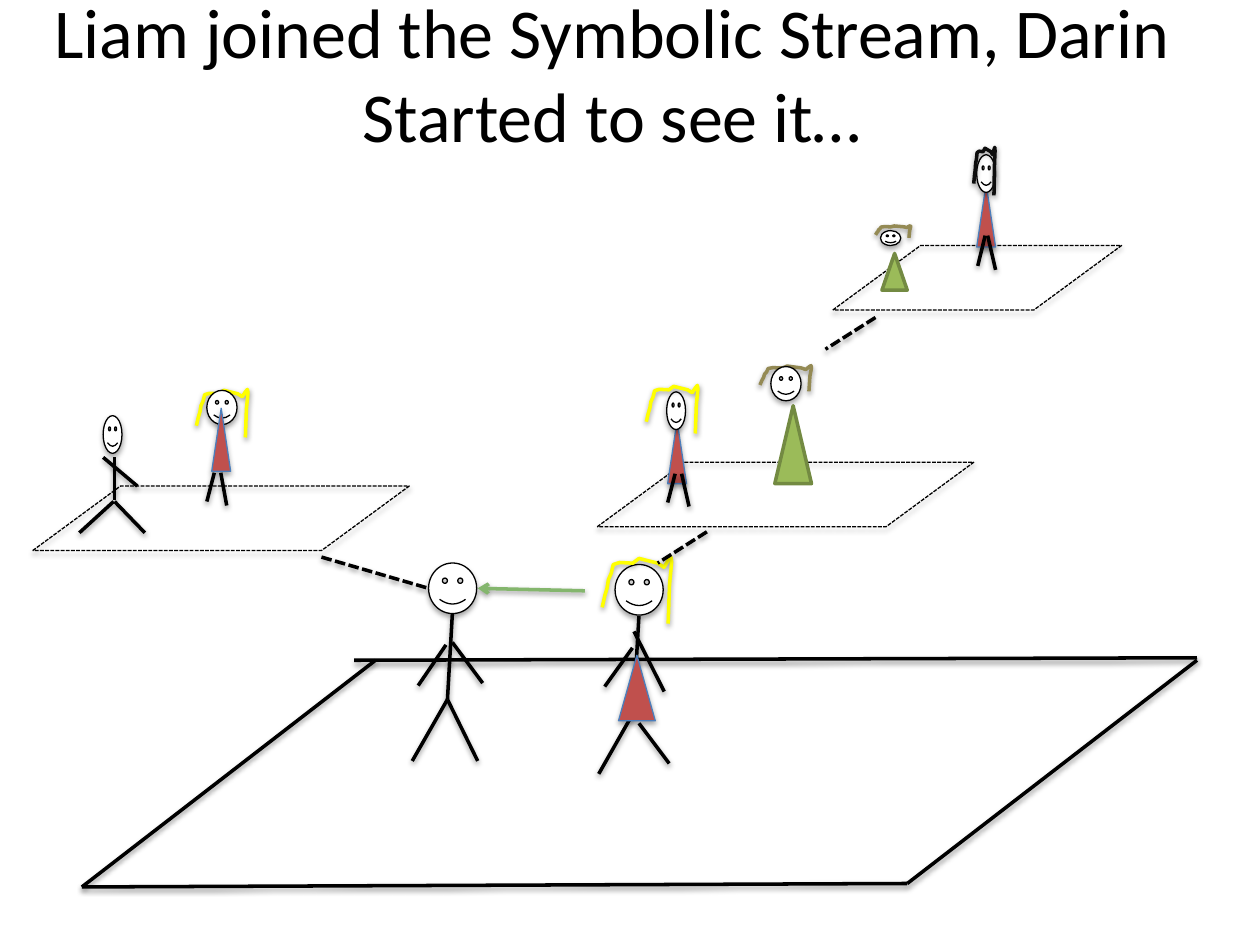
from dataclasses import dataclass
from typing import Optional, Union

from lxml import etree
from pptx import Presentation
from pptx import util as u
from pptx.dml.color import RGBColor
from pptx.enum import dml, shapes, text
from pptx.oxml.ns import qn

BLACK = RGBColor(0x00, 0x00, 0x00)
WHITE = RGBColor(0xFF, 0xFF, 0xFF)
YELLOW = RGBColor(0xFF, 0xFF, 0x00)
BROWN = RGBColor(0x94, 0x8A, 0x54)
NEAR_BLACK = RGBColor(0x0D, 0x0D, 0x0D)
RED = RGBColor(0xC0, 0x50, 0x4D)
BLUE = RGBColor(0x4B, 0x7E, 0xBC)
GREEN = RGBColor(0x9B, 0xBB, 0x59)
DARK_GREEN = RGBColor(0x73, 0x8A, 0x42)
ARROW_GREEN = RGBColor(0x84, 0xB6, 0x6D)

THIN, THICK = 0.75, 2
HAIR_CURVE = [
    (0, 0.74), (0.04, 0.56), (0.07, 0.46), (0.09, 0.33), (0.13, 0.24),
    (0.16, 0.11), (0.25, 0.08), (0.44, 0.09), (0.53, 0.02), (0.8, 0.09),
    (0.89, 0.15), (0.95, 0.05), (0.99, 0), (1, 0.07), (0.99, 0.19),
    (0.97, 0.4), (0.95, 0.98),
]


@dataclass
class Stroke:
    x1: float
    y1: float
    x2: float
    y2: float
    color: RGBColor = BLACK
    dashed: bool = False
    arrow: bool = False


@dataclass
class Solid:
    x: float
    y: float
    w: float
    h: float
    kind: shapes.MSO_SHAPE
    fill: Optional[RGBColor]
    line: RGBColor = BLACK
    width: float = THIN
    shadow: bool = True


@dataclass
class Hair:
    x: float
    y: float
    w: float
    h: float
    color: RGBColor = YELLOW


Item = Union[Stroke, Solid, Hair]


def head(x: float, y: float, w: float, h: float) -> Solid:
    return Solid(x, y, w, h, shapes.MSO_SHAPE.SMILEY_FACE, WHITE)


def red_dress(x: float, y: float, w: float = 0.38, h: float = 1.27) -> Solid:
    return Solid(x, y, w, h, shapes.MSO_SHAPE.ISOSCELES_TRIANGLE, RED, BLUE)


def green_dress(x: float, y: float, w: float, h: float) -> Solid:
    return Solid(x, y, w, h, shapes.MSO_SHAPE.ISOSCELES_TRIANGLE, GREEN,
                 DARK_GREEN, THICK, shadow=False)


def plane(x: float, y: float, w: float) -> Solid:
    return Solid(x, y, w, 1.3, shapes.MSO_SHAPE.PARALLELOGRAM, None)


FLOOR = [
    Stroke(1.65, 17.88, 18.29, 17.81), Stroke(7.14, 13.31, 24.13, 13.26),
    Stroke(1.65, 17.88, 7.57, 13.31), Stroke(18.29, 17.81, 24.13, 13.31),
]
MAN = [
    head(8.64, 11.35, 0.97, 1.02), Stroke(9.12, 12.37, 9.02, 14.1),
    Stroke(9.02, 14.1, 8.31, 15.34), Stroke(9.02, 14.1, 9.63, 15.34),
    Stroke(9.12, 12.95, 9.73, 13.77), Stroke(8.99, 13, 8.43, 13.82),
]
WOMAN = [
    head(12.4, 11.38, 0.97, 1.02), Stroke(12.88, 12.42, 12.78, 14.15),
    Stroke(12.78, 14.35, 12.07, 15.6), Stroke(12.78, 12.73, 13.39, 13.94),
    Stroke(12.88, 14.58, 13.49, 15.39), Stroke(12.75, 13.06, 12.19, 13.84),
    Hair(12.14, 11.23, 1.4, 1.37), red_dress(12.47, 13.21, 0.74, 1.32),
    Stroke(11.79, 11.91, 9.63, 11.86, ARROW_GREEN, arrow=True),
]
LEFT_THOUGHT = [
    plane(0.66, 9.8, 7.59), Stroke(6.48, 11.23, 8.64, 11.86, dashed=True),
    Hair(3.96, 7.85, 1.04, 0.99), head(4.17, 7.87, 0.61, 0.69),
    red_dress(4.27, 8.23),
    Stroke(4.32, 9.53, 4.17, 10.11), Stroke(4.45, 9.53, 4.57, 10.19),
    head(2.08, 8.38, 0.38, 0.76), Stroke(2.31, 9.22, 2.31, 10.08),
    Stroke(2.29, 10.11, 1.6, 10.74), Stroke(2.31, 10.11, 2.92, 10.74),
    Stroke(2.08, 9.22, 2.77, 9.8),
]
MIDDLE_THOUGHT = [
    plane(12.04, 9.32, 7.59), Hair(15.32, 7.37, 1.04, 0.53, BROWN),
    head(15.54, 7.39, 0.61, 0.69), red_dress(13.46, 8.48),
    Stroke(13.61, 9.55, 13.46, 10.13), Stroke(13.74, 9.55, 13.89, 10.21),
    head(13.44, 7.9, 0.38, 0.76),
    Stroke(14.25, 10.72, 13.26, 11.35, dashed=True),
    Hair(13.03, 7.77, 1.04, 0.99), green_dress(15.62, 8.18, 0.74, 1.57),
]
FAR_THOUGHT = [
    plane(16.79, 4.95, 5.82), Stroke(17.65, 6.4, 16.64, 7.04, dashed=True),
    Hair(17.65, 4.55, 0.71, 0.25, BROWN), head(17.75, 4.65, 0.41, 0.3),
    red_dress(19.69, 3.71), Stroke(19.86, 4.75, 19.71, 5.36),
    head(19.69, 3.12, 0.38, 0.76), Hair(19.63, 2.97, 0.43, 0.99, NEAR_BLACK),
    green_dress(17.78, 5.11, 0.51, 0.74), Stroke(19.91, 4.75, 20.07, 5.44),
]


def set_line(sp, color: RGBColor, width: float, dashed: bool = False) -> None:
    sp.line.color.rgb = color
    sp.line.width = u.Pt(width)
    if dashed:
        sp.line.dash_style = dml.MSO_LINE.SQUARE_DOT


def set_shadow(sp, opacity: int, distance: float, visible: bool = True) -> None:
    effects = etree.SubElement(sp._element.spPr, qn("a:effectLst"))
    if visible:
        shadow = etree.SubElement(
            effects, qn("a:outerShdw"), blurRad=str(u.Pt(3.1)),
            dist=str(u.Pt(distance)), dir="5400000", rotWithShape="0")
        color = etree.SubElement(shadow, qn("a:srgbClr"), val=str(BLACK))
        etree.SubElement(color, qn("a:alpha"), val=str(opacity * 1000))


def draw_stroke(s, item: Stroke) -> None:
    ends = [u.Cm(v) for v in (item.x1, item.y1, item.x2, item.y2)]
    sp = s.shapes.add_connector(shapes.MSO_CONNECTOR.STRAIGHT, *ends)
    set_line(sp, item.color, THICK, item.dashed)
    if item.arrow:
        etree.SubElement(sp.line._get_or_add_ln(), qn("a:tailEnd"), type="arrow")
    set_shadow(sp, 38, 1.6)


def draw_solid(s, item: Solid) -> None:
    box = [u.Cm(v) for v in (item.x, item.y, item.w, item.h)]
    sp = s.shapes.add_shape(item.kind, *box)
    if item.fill is None:
        sp.fill.background()
        sp.adjustments[0] = 1.36
    else:
        sp.fill.solid()
        sp.fill.fore_color.rgb = item.fill
    set_line(sp, item.line, item.width, dashed=item.fill is None)
    set_shadow(sp, 35, 1.8, item.shadow)


def draw_hair(s, item: Hair) -> None:
    points = [(u.Cm(item.x + item.w * px), u.Cm(item.y + item.h * py))
              for px, py in HAIR_CURVE]
    builder = s.shapes.build_freeform(*points[0])
    builder.add_line_segments(points[1:], close=False)
    sp = builder.convert_to_shape()
    sp.fill.background()
    set_line(sp, item.color, THICK)
    set_shadow(sp, 38, 1.6)


def draw_title(s, words: str) -> None:
    sp = s.shapes.add_textbox(u.Cm(-0.08), u.Cm(0.1), u.Cm(24.84), u.Cm(2.72))
    tf = sp.text_frame
    tf.word_wrap = True
    tf.vertical_anchor = text.MSO_ANCHOR.MIDDLE
    p = tf.paragraphs[0]
    p.text = words
    p.alignment = text.PP_ALIGN.CENTER
    p.font.name = "Calibri"
    p.font.size = u.Pt(40)
    p.font.color.rgb = BLACK


def main() -> None:
    prs = Presentation()
    prs.slide_width, prs.slide_height = u.Cm(25.4), u.Cm(19.05)
    s = prs.slides.add_slide(prs.slide_layouts[6])
    draw_title(s, "Liam joined the Symbolic Stream, Darin Started to see it…")
    painters = {Stroke: draw_stroke, Solid: draw_solid, Hair: draw_hair}
    for group in (FLOOR, MAN, WOMAN, LEFT_THOUGHT, MIDDLE_THOUGHT, FAR_THOUGHT):
        for item in group:
            painters[type(item)](s, item)
    prs.save("out.pptx")


if __name__ == "__main__":
    main()
